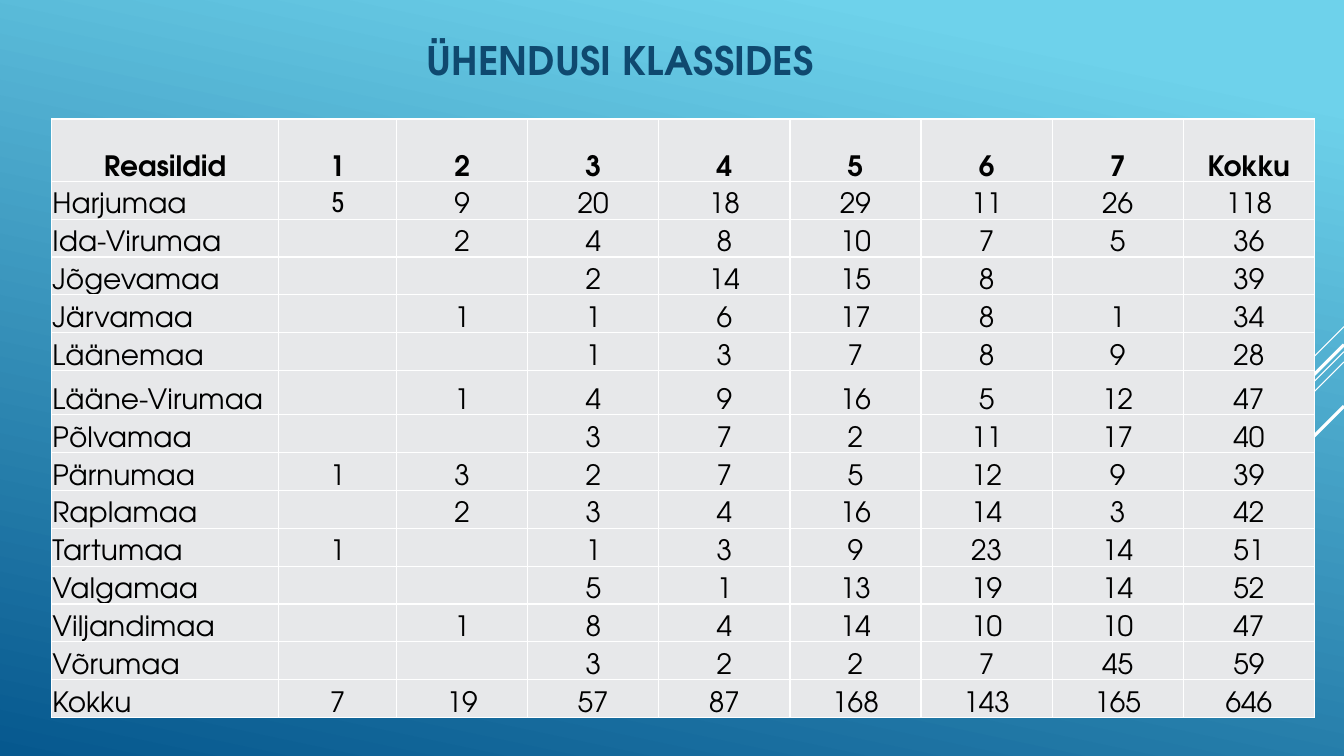
from lxml.etree import SubElement as Sub
from pptx import Presentation
from pptx.dml.color import RGBColor as Rgb
from pptx.enum.shapes import MSO_CONNECTOR as Link
from pptx.enum.text import MSO_ANCHOR as Anchor, PP_ALIGN as Align
from pptx.oxml import parse_xml
from pptx.oxml.ns import nsdecls, qn
from pptx.util import Inches, Pt

WIDE, HIGH = Inches(13.33), Inches(7.5)
HUES = {"sky": "6ED2EB", "deep": "06588E", "navy": "0F496F",
        "cell": "E7E8EA", "ink": "000000", "white": "FFFFFF"}
FACE, SLIM = "TeX Gyre Adventor", "Roboto Condensed"
INSET = {"margin_left": Inches(0.01), "margin_right": Inches(0.01),
         "margin_top": Inches(0.01), "margin_bottom": 0,
         "vertical_anchor": Anchor.BOTTOM}
BLANK = "."
COUNTS = """
Reasildid 1 2 3 4 5 6 7 Kokku
Harjumaa 5 9 20 18 29 11 26 118
Ida-Virumaa . 2 4 8 10 7 5 36
Jõgevamaa . . 2 14 15 8 . 39
Järvamaa . 1 1 6 17 8 1 34
Läänemaa . . 1 3 7 8 9 28
Lääne-Virumaa . 1 4 9 16 5 12 47
Põlvamaa . . 3 7 2 11 17 40
Pärnumaa 1 3 2 7 5 12 9 39
Raplamaa . 2 3 4 16 14 3 42
Tartumaa 1 . 1 3 9 23 14 51
Valgamaa . . 5 1 13 19 14 52
Viljandimaa . 1 8 4 14 10 10 47
Võrumaa . . 3 2 2 7 45 59
Kokku 7 19 57 87 168 143 165 646
"""
ROWS = [line.split() for line in COUNTS.strip().splitlines()]
COLS = [17.97, 9.35] + [10.38] * 7
TALL = {0: 10.44, 6: 7.4}
STEP = 6.32
RAYS = [(43.2, 7.5, 0.75), (46.53, 24.46, 0.75), (47.87, 15.53, 0.75),
        (45.6, 14.33, 2.25), (53.73, 10.43, 2.25)]


def hue(name):
    """Return the named colour."""
    return Rgb.from_string(HUES[name])


def part(whole, share):
    """Return a percentage of a length."""
    return round(whole * share / 100)


def area(left, top, wide, high):
    """Turn slide percentages into a box."""
    return (part(WIDE, left), part(HIGH, top), part(WIDE, wide), part(HIGH, high))


def style(item, form):
    """Set each attribute of a format dict."""
    for key, val in form.items():
        setattr(item, key, val)


def write(para, text, ink, **form):
    """Put one formatted run in a centred paragraph."""
    para.alignment = Align.CENTER
    run = para.add_run()
    run.text = text
    style(run.font, {"name": FACE, **form})
    run.font.color.rgb = hue(ink)


def paint(slide):
    """Fill the background with the blue gradient."""
    fill = slide.background.fill
    fill.gradient()
    fill.gradient_angle = 258
    for stop, (name, pos) in zip(fill.gradient_stops, [("sky", 0.1), ("deep", 1)]):
        stop.color.rgb = hue(name)
        stop.position = pos


def rays(slide, box):
    """Draw diagonal lines falling from the right edge of the box."""
    left, top, wide, high = box
    right = left + wide
    for start, reach, size in RAYS:
        y, run = top + part(high, start), part(wide, reach)
        ray = slide.shapes.add_connector(Link.STRAIGHT, right, y, right - run, y + run)
        ray.line.color.rgb = hue("white")
        ray.line.width = Pt(size)
        Sub(ray._element.spPr, qn("a:effectLst"))


def head(slide, box):
    """Place the title in its box."""
    title = slide.shapes.title
    style(title, dict(zip(("left", "top", "width", "height"), box)))
    frame = title.text_frame
    style(frame, {"word_wrap": True, "vertical_anchor": Anchor.MIDDLE})
    write(frame.paragraphs[0], "ÜHENDUSI KLASSIDES", "navy", size=Pt(28), bold=True)


def edge(cell):
    """Give the cell thin white borders."""
    props = cell._tc.get_or_add_tcPr()
    for spot, side in enumerate("LRTB"):
        props.insert(spot, parse_xml(
            f'<a:ln{side} {nsdecls("a")} w="12700"><a:solidFill>'
            f'<a:srgbClr val="{HUES["white"]}"/></a:solidFill></a:ln{side}>'))


def table(slide, box):
    """Build the table of counts by county and class."""
    wide, high = box[2:]
    grid = slide.shapes.add_table(len(ROWS), len(COLS), *box).table
    style(grid, {"first_row": False, "horz_banding": False})
    for col, share in zip(grid.columns, COLS):
        col.width = part(wide, share)
    for r, row in enumerate(ROWS):
        grid.rows[r].height = part(high, TALL.get(r, STEP))
        for c, text in enumerate(row):
            cell = grid.cell(r, c)
            style(cell, INSET)
            cell.fill.solid()
            cell.fill.fore_color.rgb = hue("cell")
            edge(cell)
            if text == BLANK:
                continue
            para = cell.text_frame.paragraphs[0]
            face = SLIM if (r, c) == (1, 1) else FACE
            write(para, text, "ink", name=face, size=Pt(20), bold=r == 0)
            if r and not c:
                para.alignment = Align.LEFT


def main():
    """Build and save the slide."""
    deck = Presentation()
    style(deck, {"slide_width": WIDE, "slide_height": HIGH})
    slide = deck.slides.add_slide(deck.slide_layouts[5])
    paint(slide)
    rays(slide, area(0, 0, 100, 100))
    head(slide, area(24.38, 2.53, 43.51, 10.67))
    table(slide, area(3.83, 15.73, 94, 79.2))
    deck.save("out.pptx")


if __name__ == "__main__":
    main()
